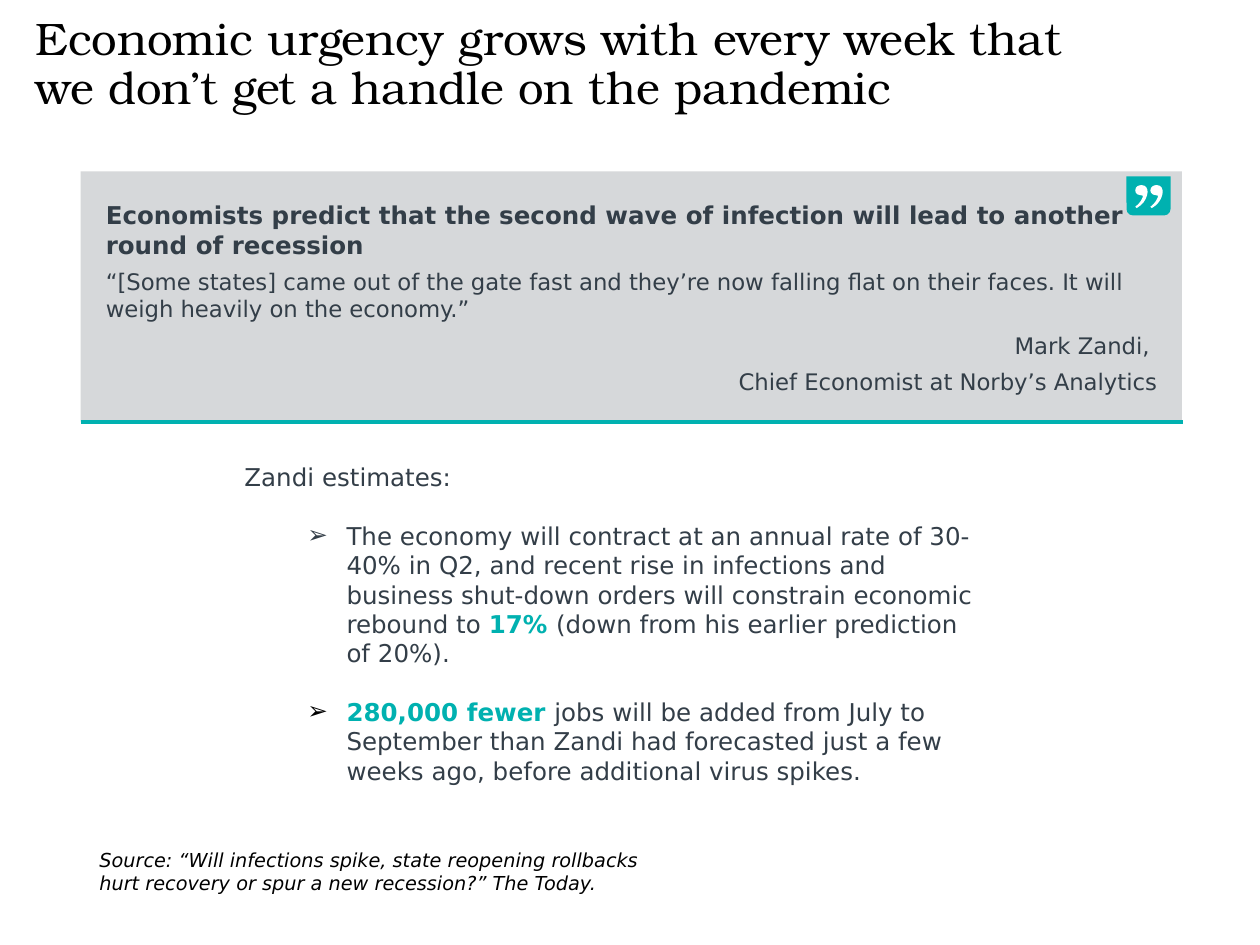
from lxml import etree
from pptx import Presentation
from pptx.dml.color import RGBColor
from pptx.enum.shapes import MSO_CONNECTOR, MSO_SHAPE
from pptx.enum.text import MSO_ANCHOR, MSO_AUTO_SIZE, PP_ALIGN
from pptx.oxml.ns import qn
from pptx.util import Inches, Pt

LEFT, RIGHT = PP_ALIGN.LEFT, PP_ALIGN.RIGHT
TOP, MIDDLE = MSO_ANCHOR.TOP, MSO_ANCHOR.MIDDLE
NO_AUTOFIT = MSO_AUTO_SIZE.NONE
STRAIGHT = MSO_CONNECTOR.STRAIGHT
RECTANGLE = MSO_SHAPE.RECTANGLE
ROUNDED_TAB = MSO_SHAPE.ROUND_2_SAME_RECTANGLE

COLORS = {"black": "000000", "slate": "333E48", "teal": "00B1B0",
          "grey": "D6D8DA", "white": "FFFFFF"}
SANS, SERIF = "DejaVu Sans", "TeX Gyre Bonum"

# Outline of one closing quotation mark, in thousandths of an inch
QUOTE_MARK = [
    (12, 182), (0, 172), (25, 150), (45, 125), (57, 102), (61, 89), (57, 82),
    (38, 79), (18, 73), (5, 59), (0, 42), (5, 22), (18, 8), (35, 1), (55, 0),
    (74, 5), (88, 17), (96, 34), (98, 54), (94, 80), (84, 107), (67, 135),
    (43, 160),
]


def rgb(name):
    return RGBColor.from_string(COLORS[name])


def set_all(target, **values):
    for name, value in values.items():
        setattr(target, name, value)


def place(shape, left, top, width, height):
    set_all(shape, left=Inches(left), top=Inches(top),
            width=Inches(width), height=Inches(height))


def set_frame(shape, anchor=TOP, insets=(0.1, 0.05, 0.1, 0.05)):
    """Wrap the text, without autofit; insets are left, top, right, bottom."""
    left, top, right, bottom = map(Inches, insets)
    set_all(shape.text_frame, word_wrap=True, auto_size=NO_AUTOFIT,
            vertical_anchor=anchor, margin_left=left, margin_top=top,
            margin_right=right, margin_bottom=bottom)


def write_paragraphs(shape, paragraphs, align=LEFT, before=0, spacing=1.0):
    """Each paragraph is (spans, overrides); each span is (text, color, font)."""
    frame = shape.text_frame
    for index, (spans, overrides) in enumerate(paragraphs):
        para = frame.add_paragraph() if index else frame.paragraphs[0]
        values = {"alignment": align, "space_before": Pt(before),
                  "space_after": Pt(0), "line_spacing": spacing}
        set_all(para, **{**values, **overrides})
        for text, color, font in spans:
            span = para.add_run()
            span.text = text
            span.font.color.rgb = rgb(color)
            set_all(span.font, **font)


def set_bullet(para, char=None, color=None, margin=0.0, hanging=0.0):
    """Give the paragraph a bullet, or none when no character is given."""
    props = para._p.get_or_add_pPr()
    props.set("marL", str(Inches(margin)))
    props.set("indent", str(-Inches(hanging)))
    if color:
        holder = etree.SubElement(props, qn("a:buClr"))
        etree.SubElement(holder, qn("a:srgbClr"), val=COLORS[color])
    if char:
        etree.SubElement(props, qn("a:buChar"), char=char)
    else:
        etree.SubElement(props, qn("a:buNone"))


def fill_shape(shape, color):
    shape.shadow.inherit = False
    shape.fill.solid()
    shape.fill.fore_color.rgb = rgb(color)
    shape.line.fill.background()


def add_filled(page, kind, bounds, color):
    shape = page.shapes.add_shape(kind, *map(Inches, bounds))
    fill_shape(shape, color)
    return shape


def add_rule(page, left, right, top):
    rule = page.shapes.add_connector(
        STRAIGHT, Inches(left), Inches(top), Inches(right), Inches(top))
    rule.line.color.rgb = rgb("teal")
    rule.line.width = Pt(2.25)
    etree.SubElement(rule._element.spPr, qn("a:effectLst"))


def add_quote_mark(page, left, top):
    builder = page.shapes.build_freeform(*QUOTE_MARK[0], scale=Inches(0.001))
    builder.add_line_segments(QUOTE_MARK[1:], close=True)
    fill_shape(builder.convert_to_shape(Inches(left), Inches(top)), "white")


def add_title(page):
    title = page.shapes.title
    place(title, 0.18, 0.12, 8.62, 0.8)
    set_frame(title, anchor=MIDDLE)
    text = ("Economic urgency grows with every week that "
            "we don’t get a handle on the pandemic")
    font = {"name": SERIF, "size": Pt(26)}
    write_paragraphs(title, [([(text, "black", font)], {})], spacing=0.9)


def add_quote_panel(page):
    panel = add_filled(page, RECTANGLE, (0.64, 1.36, 8.74, 1.99), "grey")
    set_frame(panel, insets=(0.2, 0.23, 0.2, 0.2))
    heading = {"name": SANS, "size": Pt(14), "bold": True}
    plain = {"name": SANS, "size": Pt(13)}
    lines = [
        ("Economists predict that the second wave of infection will lead to "
         "another round of recession", heading, LEFT),
        ("“[Some states] came out of the gate fast and they’re now falling "
         "flat on their faces. It will weigh heavily on the economy.”",
         plain, LEFT),
        ("Mark Zandi, ", plain, RIGHT),
        ("Chief Economist at Norby’s Analytics", plain, RIGHT),
    ]
    write_paragraphs(panel, [([(text, "slate", font)], {"alignment": align})
                             for text, font, align in lines], before=5)
    add_rule(page, 0.64, 9.39, 3.35)


def add_quote_badge(page):
    tab = add_filled(page, ROUNDED_TAB, (8.94, 1.4, 0.35, 0.31), "teal")
    tab.rotation = 180
    for left in (9.01, 9.13):
        add_quote_mark(page, left, 1.47)


def add_estimates(page):
    body = page.placeholders[1]
    place(body, 1.84, 3.35, 6.03, 2.96)
    set_frame(body, insets=(0.1, 0.32, 0.1, 0.05))
    plain = {"name": SANS, "size": Pt(14), "bold": False}
    strong = {**plain, "bold": True}
    gap = {"level": 1, "space_before": Pt(16.5)}
    write_paragraphs(body, [
        ([("Zandi estimates:", "slate", plain)], {}),
        ([("The economy will contract at an annual rate of 30-40% in Q2, and "
           "recent rise in infections and business shut-down orders will "
           "constrain economic rebound to ", "slate", plain),
          ("17% ", "teal", strong),
          ("(down from his earlier prediction of 20%).", "slate", plain)], gap),
        ([("280,000 fewer ", "teal", strong),
          ("jobs will be added from July to September than Zandi had "
           "forecasted just a few weeks ago, before additional virus spikes.",
           "slate", plain)], gap),
    ])
    heading, *points = body.text_frame.paragraphs
    set_bullet(heading)
    for para, color in zip(points, ("slate", "black")):
        set_bullet(para, "➢", color, margin=0.81, hanging=0.31)


def add_source_note(page):
    box = page.shapes.add_textbox(*map(Inches, (0.69, 6.68, 4.81, 0.47)))
    set_frame(box)
    text = ("Source: “Will infections spike, state reopening rollbacks hurt "
            "recovery or spur a new recession?” The Today.")
    font = {"name": SANS, "size": Pt(11), "italic": True}
    write_paragraphs(box, [([(text, "black", font)], {})])


def main():
    deck = Presentation()
    set_all(deck, slide_width=Inches(10), slide_height=Inches(7.5))
    page = deck.slides.add_slide(deck.slide_layouts[1])
    add_title(page)
    add_source_note(page)
    add_quote_panel(page)
    add_quote_badge(page)
    add_estimates(page)
    deck.save("out.pptx")


if __name__ == "__main__":
    main()
